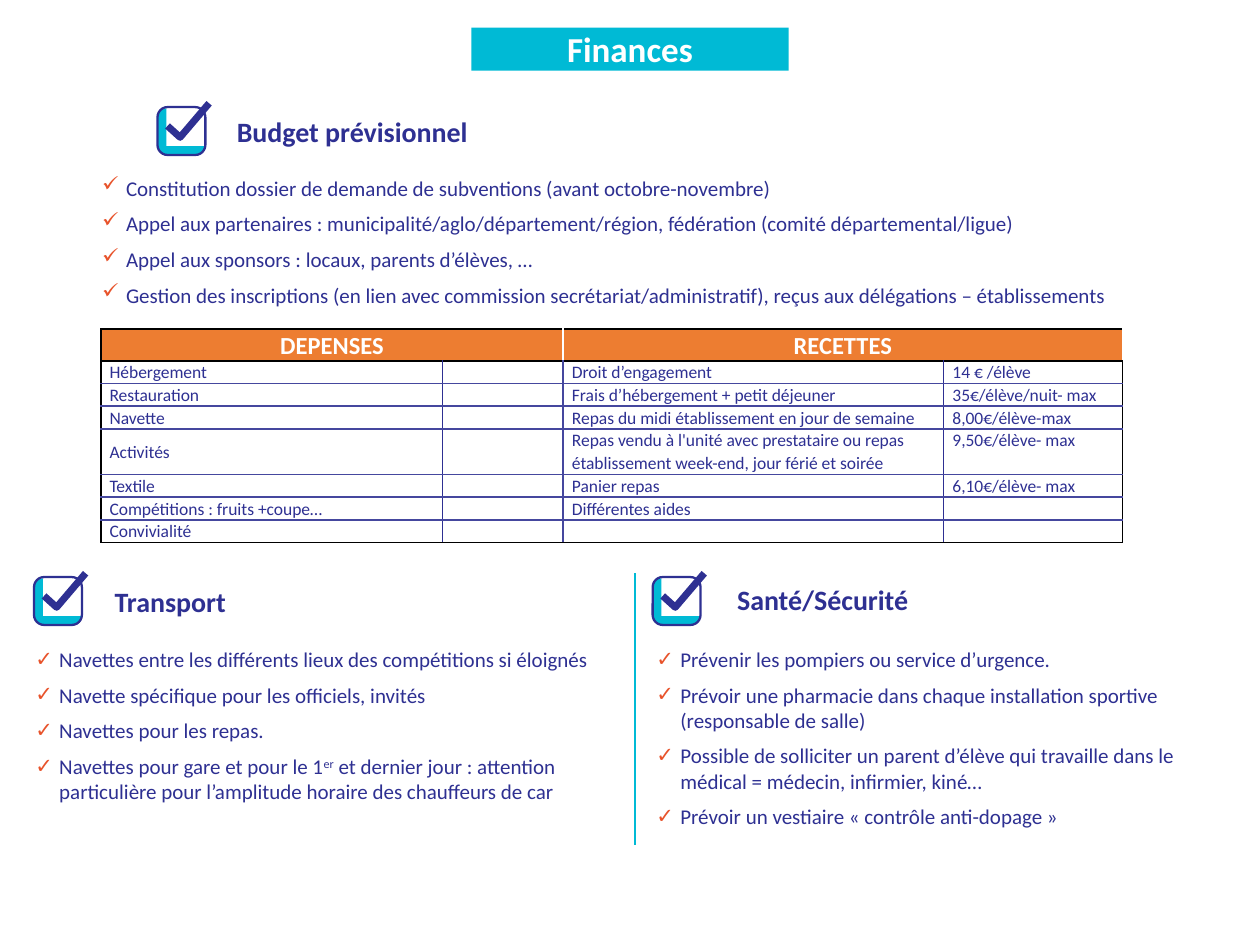
from dataclasses import dataclass

from lxml.etree import SubElement
from pptx import Presentation
from pptx.dml.color import RGBColor
from pptx.enum.shapes import MSO_CONNECTOR, MSO_SHAPE
from pptx.enum.text import MSO_ANCHOR, MSO_AUTO_SIZE, PP_ALIGN
from pptx.oxml.ns import qn
from pptx.util import Inches, Pt


@dataclass(frozen=True)
class Theme:
    font: str = "Calibri"
    navy: str = "2E3092"
    cyan: str = "00BAD5"
    orange: str = "ED7D31"
    bullet: str = "E8532B"
    rule: str = "45479E"
    white: str = "FFFFFF"
    black: str = "000000"
    title_size: int = 20
    heading_size: int = 16
    table_head_size: int = 14
    list_size: int = 12
    cell_size: int = 10


THEME = Theme()

BUDGET = [
    "Constitution dossier de demande de subventions (avant octobre-novembre)",
    "Appel aux partenaires : municipalité/aglo/département/région, fédération (comité départemental/ligue)",
    "Appel aux sponsors : locaux, parents d’élèves, …",
    "Gestion des inscriptions (en lien avec commission secrétariat/administratif), "
    "reçus aux délégations – établissements",
]
# A tuple holds normal and superscript runs in turn
TRANSPORT = [
    "Navettes entre les différents lieux des compétitions si éloignés",
    "Navette spécifique pour les officiels, invités",
    "Navettes pour les repas.",
    ("Navettes pour gare et pour le 1", "er",
     " et dernier jour : attention particulière pour l’amplitude horaire des chauffeurs de car"),
]
HEALTH = [
    "Prévenir les pompiers ou service d’urgence.",
    "Prévoir une pharmacie dans chaque installation sportive (responsable de salle)",
    "Possible de solliciter un parent d’élève qui travaille dans le médical = médecin, infirmier, kiné…",
    "Prévoir un vestiaire « contrôle anti-dopage »",
]
FINANCES = [
    ("DEPENSES", "", "RECETTES", ""),
    ("Hébergement", "", "Droit d’engagement", "14 € /élève"),
    ("Restauration", "", "Frais d’hébergement + petit déjeuner", "35€/élève/nuit- max"),
    ("Navette", "", "Repas du midi établissement en jour de semaine", "8,00€/élève-max"),
    ("Activités", "", "Repas vendu à l'unité avec prestataire ou repas établissement week-end, "
     "jour férié et soirée", "9,50€/élève- max"),
    ("Textile", "", "Panier repas", "6,10€/élève- max"),
    ("Compétitions : fruits +coupe…", "", "Différentes aides", ""),
    ("Convivialité", "", "", ""),
]
COLUMN_WIDTHS = (2.71, 0.96, 3.02, 1.42)
ROW_HEIGHTS = (0.24, 0.17, 0.17, 0.17, 0.35, 0.17, 0.17, 0.17)


def color(value):
    return RGBColor.from_string(value)


def set_font(paragraph, size, font_color, bold=False):
    font = paragraph.font
    font.name, font.size, font.bold = THEME.font, Pt(size), bold
    font.color.rgb = color(font_color)


def place_frame(shape, left, top, width, height):
    """Position a text shape and clear its insets."""
    shape.left, shape.top = Inches(left), Inches(top)
    shape.width, shape.height = Inches(width), Inches(height)
    frame = shape.text_frame
    frame.word_wrap, frame.auto_size = True, MSO_AUTO_SIZE.NONE
    frame.vertical_anchor = MSO_ANCHOR.TOP
    frame.margin_left = frame.margin_right = frame.margin_bottom = 0
    frame.margin_top = Inches(0.01)
    return frame


def new_text_box(slide):
    return slide.shapes.add_textbox(0, 0, 0, 0)


def add_title(slide, left, top, width, height):
    shape = slide.shapes.title
    frame = place_frame(shape, left, top, width, height)
    frame.margin_top = 0
    shape.fill.solid()
    shape.fill.fore_color.rgb = color(THEME.cyan)
    paragraph = frame.paragraphs[0]
    paragraph.text, paragraph.alignment = "Finances", PP_ALIGN.CENTER
    set_font(paragraph, THEME.title_size, THEME.white, True)


def add_heading(shape, text, left, top):
    frame = place_frame(shape, left, top, 2.55, 0.28)
    frame.margin_left = Inches(0.01)
    paragraph = frame.paragraphs[0]
    paragraph.text, paragraph.space_before = text, Pt(0)
    set_font(paragraph, THEME.heading_size, THEME.navy, True)


def add_bullet(paragraph):
    properties = paragraph._p.get_or_add_pPr()
    properties.set("marL", str(Inches(0.2)))
    properties.set("indent", str(-Inches(0.19)))
    SubElement(SubElement(properties, qn("a:buClr")), qn("a:srgbClr"), val=THEME.bullet)
    SubElement(properties, qn("a:buChar"), char="✓")


def add_check_list(shape, items, left, top, width, height):
    frame = place_frame(shape, left, top, width, height)
    for index, item in enumerate(items):
        paragraph = frame.add_paragraph() if index else frame.paragraphs[0]
        add_bullet(paragraph)
        paragraph.space_before = Pt(6 if index else 0)
        set_font(paragraph, THEME.list_size, THEME.navy)
        for position, text in enumerate((item,) if isinstance(item, str) else item):
            run = paragraph.add_run()
            run.text = text
            if position % 2:
                run.font._element.set("baseline", "30000")


def add_check_icon(slide, left, top):
    """Ticked box, 0.41 inch wide."""
    shapes = slide.shapes.add_group_shape().shapes

    def outline(points, close):
        points = [(Inches(left + x), Inches(top + y)) for x, y in points]
        builder = shapes.build_freeform(*points[0])
        builder.add_line_segments(points[1:], close=close)
        shape = builder.convert_to_shape()
        shape.shadow.inherit = False
        return shape

    def draw_line(shape, width):
        shape.fill.background()
        shape.line.color.rgb = color(THEME.navy)
        shape.line.width = Pt(width)

    # Cyan edge along the left and bottom
    edge = outline([(0.07, 0.04), (0.03, 0.05), (0, 0.1), (0, 0.36), (0.02, 0.39), (0.06, 0.41),
                    (0.33, 0.41), (0.38, 0.36), (0.38, 0.34), (0.07, 0.34)], True)
    edge.fill.solid()
    edge.fill.fore_color.rgb = color(THEME.cyan)
    edge.line.fill.background()
    # Box and tick
    box = shapes.add_shape(MSO_SHAPE.ROUNDED_RECTANGLE, Inches(left), Inches(top + 0.03),
                           Inches(0.38), Inches(0.38))
    box.adjustments[0] = 0.21
    box.shadow.inherit = False
    draw_line(box, 1.3)
    draw_line(outline([(0.08, 0.18), (0.18, 0.27), (0.41, 0)], False), 4)


def vertical_border(row, line):
    if line in (0, 4):
        return THEME.black, 1
    if row == 0:
        return THEME.white, 1
    return (THEME.rule, 1) if line == 2 else (THEME.navy, 0.25)


def horizontal_border(line):
    return (THEME.black if line in (0, 1, len(FINANCES)) else THEME.rule), 1


def set_borders(cell, row, column):
    borders = {"a:lnL": vertical_border(row, column), "a:lnR": vertical_border(row, column + 1),
               "a:lnT": horizontal_border(row), "a:lnB": horizontal_border(row + 1)}
    properties = cell._tc.get_or_add_tcPr()
    for tag, (line_color, width) in borders.items():
        line = SubElement(properties, qn(tag), w=str(Pt(width)))
        SubElement(SubElement(line, qn("a:solidFill")), qn("a:srgbClr"), val=line_color)


def add_finance_table(slide, left, top):
    table = slide.shapes.add_table(len(FINANCES), len(COLUMN_WIDTHS), Inches(left), Inches(top),
                                   Inches(sum(COLUMN_WIDTHS)), Inches(sum(ROW_HEIGHTS))).table
    table.first_row = table.horz_banding = False
    for column, width in zip(table.columns, COLUMN_WIDTHS):
        column.width = Inches(width)
    for row_index, (height, values) in enumerate(zip(ROW_HEIGHTS, FINANCES)):
        table.rows[row_index].height = Inches(height)
        header = row_index == 0
        size = THEME.table_head_size if header else THEME.cell_size
        for column_index, value in enumerate(values):
            cell = table.cell(row_index, column_index)
            cell.margin_left = cell.margin_right = Inches(0.07)
            cell.margin_top = cell.margin_bottom = 0
            set_borders(cell, row_index, column_index)
            paragraph = cell.text_frame.paragraphs[0]
            paragraph.line_spacing = 1.07
            set_font(paragraph, size, THEME.white if header else THEME.navy, header)
            if value:
                paragraph.text = value
            else:
                SubElement(paragraph._p, qn("a:endParaRPr"), sz=str(size * 100))
            if header:
                paragraph.alignment = PP_ALIGN.CENTER
                cell.fill.solid()
                cell.fill.fore_color.rgb = color(THEME.orange)
            else:
                cell.fill.background()
            if value == "Activités":
                cell.vertical_anchor = MSO_ANCHOR.MIDDLE
    for start in (0, 2):
        table.cell(0, start).merge(table.cell(0, start + 1))


def add_divider(slide, left, top, bottom):
    line = slide.shapes.add_connector(MSO_CONNECTOR.STRAIGHT, Inches(left), Inches(top),
                                      Inches(left), Inches(bottom))
    line.line.color.rgb = color(THEME.cyan)
    line.line.width = Pt(1.25)
    SubElement(line._element.spPr, qn("a:effectLst"))


def main():
    presentation = Presentation()
    presentation.slide_width, presentation.slide_height = Inches(10), Inches(7.5)
    slide = presentation.slides.add_slide(presentation.slide_layouts.get_by_name("Comparison"))
    body = {shape.placeholder_format.idx: shape for shape in slide.placeholders}
    add_title(slide, 3.74, 0.22, 2.52, 0.34)

    # Budget
    add_check_icon(slide, 1.25, 0.82)
    add_heading(new_text_box(slide), "Budget prévisionnel", 1.87, 0.9)
    add_check_list(new_text_box(slide), BUDGET, 0.8, 1.38, 8.39, 1.07)
    add_finance_table(slide, 0.8, 2.61)

    # Transport
    add_check_icon(slide, 0.27, 4.55)
    add_heading(body[1], "Transport", 0.9, 4.63)
    add_check_list(body[2], TRANSPORT, 0.27, 5.12, 4.63, 1.28)

    # Health and safety
    add_divider(slide, 5.04, 4.55, 6.71)
    add_check_icon(slide, 5.18, 4.55)
    add_heading(body[3], "Santé/Sécurité", 5.84, 4.61)
    add_check_list(body[4], HEALTH, 5.2, 5.12, 4.63, 1.48)

    presentation.save("out.pptx")


if __name__ == "__main__":
    main()
